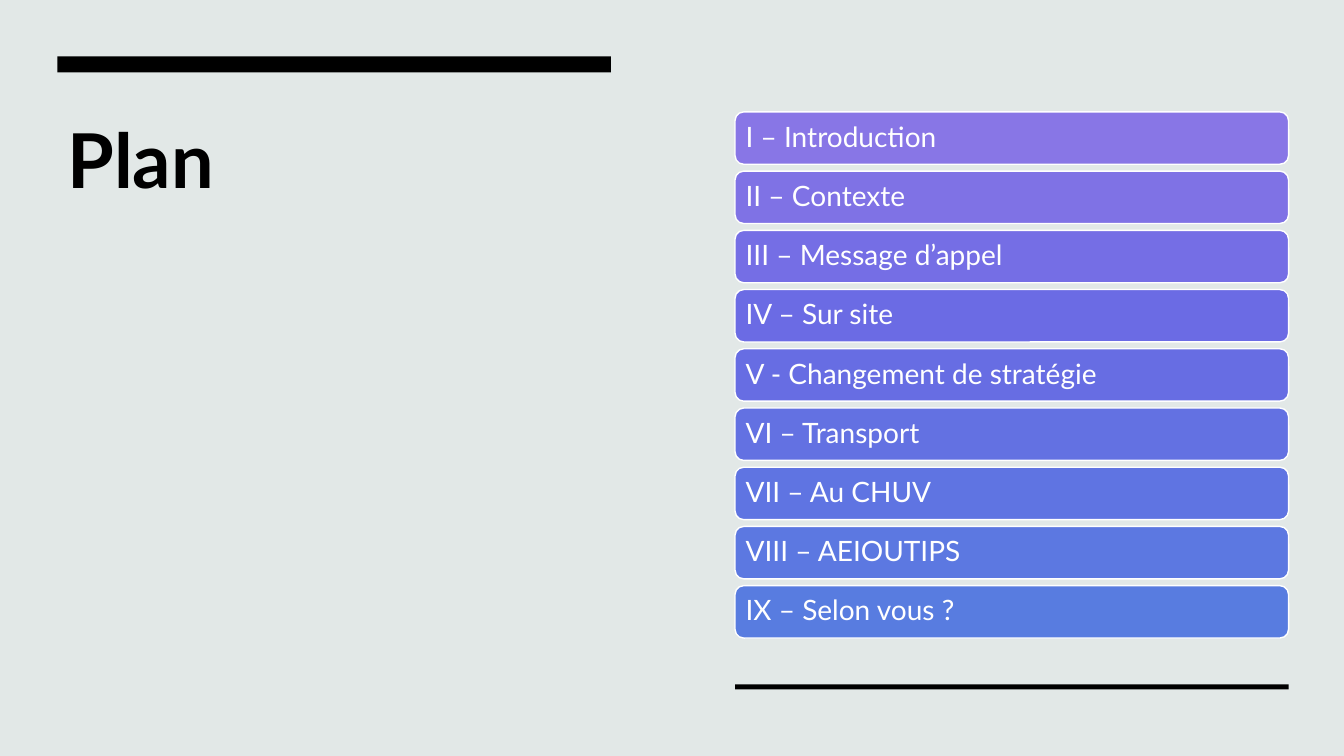
import pptx
import pptx.dml.color
import pptx.enum.shapes
import pptx.enum.text
import pptx.util

Inches = pptx.util.Inches
Pt = pptx.util.Pt
RGBColor = pptx.dml.color.RGBColor
Shape = pptx.enum.shapes.MSO_SHAPE
Anchor = pptx.enum.text.MSO_ANCHOR
Align = pptx.enum.text.PP_ALIGN

BACKGROUND = RGBColor(0xE2, 0xE8, 0xE7)
BLACK = RGBColor(0x00, 0x00, 0x00)
WHITE = RGBColor(0xFF, 0xFF, 0xFF)

CHAPTERS = [
    ("I – Introduction", RGBColor(0x88, 0x76, 0xE6)),
    ("II – Contexte", RGBColor(0x7F, 0x72, 0xE5)),
    ("III – Message d’appel", RGBColor(0x75, 0x6E, 0xE5)),
    ("IV – Sur site", RGBColor(0x6B, 0x6B, 0xE4)),
    ("V - Changement de stratégie", RGBColor(0x67, 0x6D, 0xE3)),
    ("VI – Transport", RGBColor(0x63, 0x71, 0xE2)),
    ("VII – Au CHUV", RGBColor(0x5F, 0x74, 0xE2)),
    ("VIII – AEIOUTIPS", RGBColor(0x5C, 0x78, 0xE1)),
    ("IX – Selon vous ?", RGBColor(0x58, 0x7C, 0xE0)),
]

TITLE_LEFT, PLAN_LEFT, COLUMN_WIDTH = 0.57, 7.29, 5.49
FIRST_TOP, LAST_TOP, CHAPTER_HEIGHT = 1.11, 5.81, 0.52


class PlanSlide:
    font_name = "Lato"

    def __init__(self, slide):
        self.slide = slide
        slide.background.fill.solid()
        slide.background.fill.fore_color.rgb = BACKGROUND

    def set_text(self, shape, text, size, color, bold=False):
        shape.text_frame.word_wrap = True
        paragraph = shape.text_frame.paragraphs[0]
        paragraph.text = text
        paragraph.alignment = Align.LEFT
        paragraph.font.name = self.font_name
        paragraph.font.size = Pt(size)
        paragraph.font.bold = bold
        paragraph.font.color.rgb = color
        return paragraph

    def block(self, kind, left, top, height, fill):
        shape = self.slide.shapes.add_shape(
            kind, Inches(left), Inches(top), Inches(COLUMN_WIDTH), Inches(height))
        shape.shadow.inherit = False
        shape.fill.solid()
        shape.fill.fore_color.rgb = fill
        return shape

    def bar(self, left, top, height):
        bar = self.block(Shape.RECTANGLE, left, top, height, BLACK)
        bar.line.fill.background()

    def title(self, text):
        title = self.slide.shapes.add_textbox(
            Inches(TITLE_LEFT), Inches(1.07), Inches(COLUMN_WIDTH), Inches(2.68))
        self.set_text(title, text, 54, BLACK, bold=True)

    def chapter(self, top, text, fill):
        chapter = self.block(
            Shape.ROUNDED_RECTANGLE, PLAN_LEFT, top, CHAPTER_HEIGHT, fill)
        chapter.line.color.rgb = WHITE
        chapter.line.width = Pt(1)
        frame = chapter.text_frame
        frame.vertical_anchor = Anchor.MIDDLE
        frame.margin_left = frame.margin_right = Inches(0.08)
        self.set_text(chapter, text, 20, WHITE).line_spacing = 0.9


def main():
    deck = pptx.Presentation()
    deck.slide_width = Inches(13.33)
    deck.slide_height = Inches(7.5)
    plan = PlanSlide(deck.slides.add_slide(deck.slide_layouts[6]))

    # Title under its heavy bar
    plan.title("Plan")
    plan.bar(TITLE_LEFT, 0.56, 0.16)

    # Chapters, evenly stacked above the thin bar
    plan.bar(PLAN_LEFT, 6.79, 0.05)
    pitch = (LAST_TOP - FIRST_TOP) / (len(CHAPTERS) - 1)
    for row, (text, fill) in enumerate(CHAPTERS):
        plan.chapter(FIRST_TOP + row * pitch, text, fill)

    deck.save("out.pptx")


if __name__ == "__main__":
    main()
